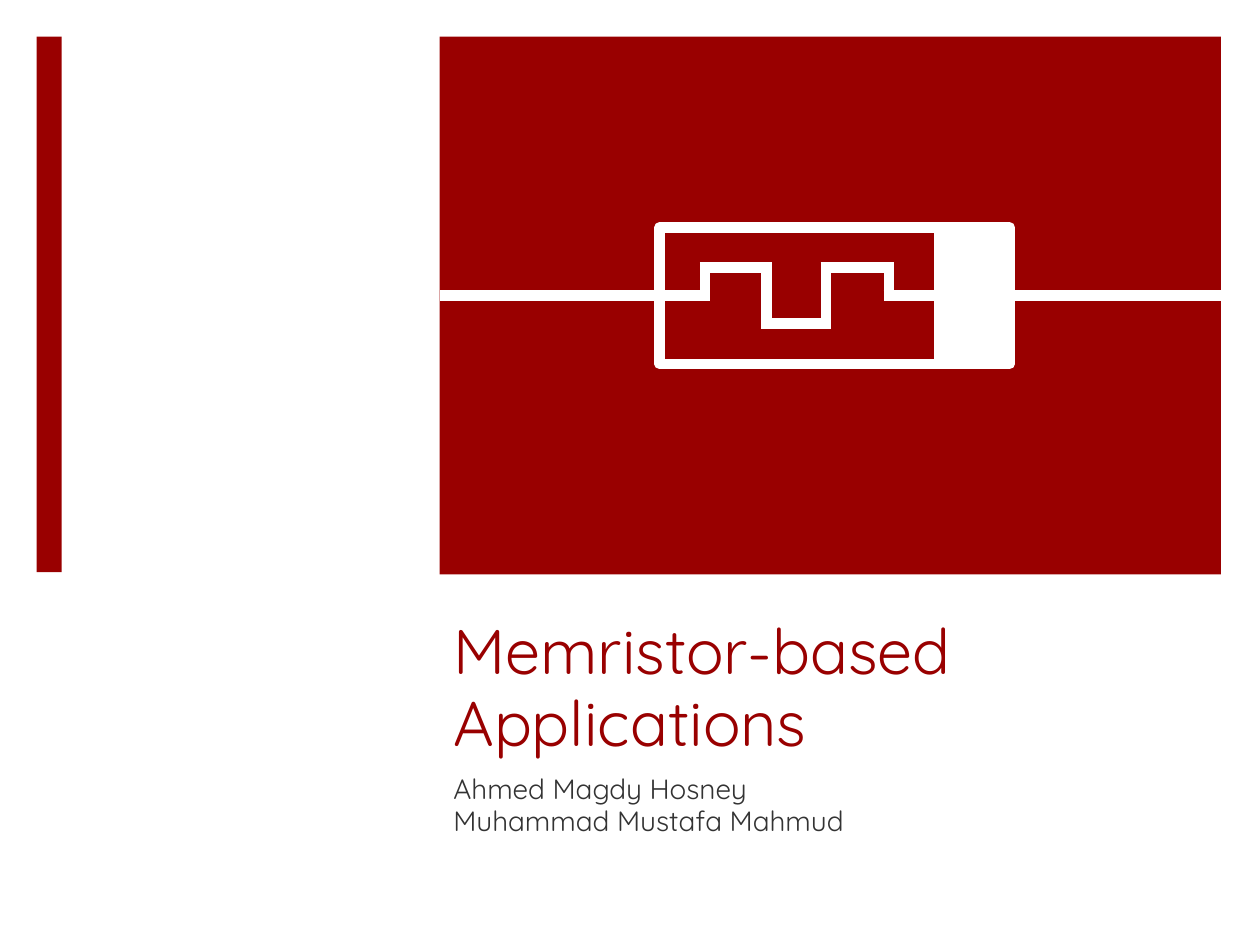
from itertools import pairwise

from lxml import etree
from pptx import Presentation
from pptx.dml.color import RGBColor
from pptx.enum import shapes, text
from pptx.oxml.ns import qn
from pptx.util import Pt

RED, WHITE, GREY = "990000", "FFFFFF", "333333"
FONT = "Quicksand"
STROKE = 6

# left, top, width, height
PANEL = (251.3, 20.9, 446.4, 307.4)
SIDE_BAR = (20.9, 20.9, 14.4, 306)
BODY = (377, 130, 188, 78)
BAND = (537, 130, 40, 78)

# box, anchor, size, colour, lines
TEXTS = [
    ((252, 355.7, 429.8, 82.8), text.MSO_ANCHOR.BOTTOM, 36, RED,
     ["Memristor-based Applications"]),
    ((252, 438.5, 429.8, 49), text.MSO_ANCHOR.TOP, 16, GREY,
     ["Ahmed Magdy Hosney", "Muhammad Mustafa Mahmud"]),
]

MIDDLE, HIGH, LOW = 169, 153, 185
# (x where a level starts, level); the last entry ends the coil
COIL = [(377, MIDDLE), (403, HIGH), (438, LOW), (472, HIGH),
        (508, MIDDLE), (537, MIDDLE)]


def color(hex_code):
    return RGBColor.from_string(hex_code)


def add_rect(slide, box, fill=None, line=None):
    rect = slide.shapes.add_shape(shapes.MSO_SHAPE.RECTANGLE, *map(Pt, box))
    rect.shadow.inherit = False
    if fill:
        rect.fill.solid()
        rect.fill.fore_color.rgb = color(fill)
    else:
        rect.fill.background()
    if line:
        rect.line.color.rgb = color(line)
        rect.line.width = Pt(STROKE)
    else:
        rect.line.fill.background()
    return rect


def add_wire(slide, x1, y1, x2, y2):
    wire = slide.shapes.add_connector(
        shapes.MSO_CONNECTOR.STRAIGHT, Pt(x1), Pt(y1), Pt(x2), Pt(y2))
    wire.line.color.rgb = color(WHITE)
    wire.line.width = Pt(STROKE)
    etree.SubElement(wire.line._get_or_add_ln().getparent(), qn("a:effectLst"))
    return wire


def add_coil(slide):
    """Draw the square wave; level runs overlap the risers to fill corners."""
    overlap = STROKE / 2
    for (x, level), (next_x, next_level) in pairwise(COIL):
        add_wire(slide, x - overlap, level, next_x + overlap, level)
        if next_level != level:
            add_wire(slide, next_x, level, next_x, next_level)


def add_text(slide, box, anchor, size, ink, lines):
    frame = slide.shapes.add_textbox(*map(Pt, box)).text_frame
    frame.word_wrap = True
    frame.vertical_anchor = anchor
    frame.text = "\n".join(lines)
    for paragraph in frame.paragraphs:
        paragraph.line_spacing = 0.95
        for run in paragraph.runs:
            run.font.name = FONT
            run.font.size = Pt(size)
            run.font.color.rgb = color(ink)


def main():
    prs = Presentation()
    prs.slide_width, prs.slide_height = Pt(720), Pt(540)
    slide = prs.slides.add_slide(prs.slide_layouts[6])

    add_rect(slide, PANEL, fill=RED)
    add_rect(slide, SIDE_BAR, fill=RED)
    for entry in TEXTS:
        add_text(slide, *entry)

    band = add_rect(slide, BAND, fill=WHITE, line=WHITE)
    body = add_rect(slide, BODY, line=WHITE)
    add_coil(slide)
    panel_left, panel_right = PANEL[0], PANEL[0] + PANEL[2]
    left_wire = add_wire(slide, panel_left, MIDDLE, BODY[0], MIDDLE)
    left_wire.end_connect(body, 1)
    right_wire = add_wire(slide, BAND[0] + BAND[2], MIDDLE, panel_right, MIDDLE)
    right_wire.begin_connect(band, 3)

    prs.save("out.pptx")


if __name__ == "__main__":
    main()
